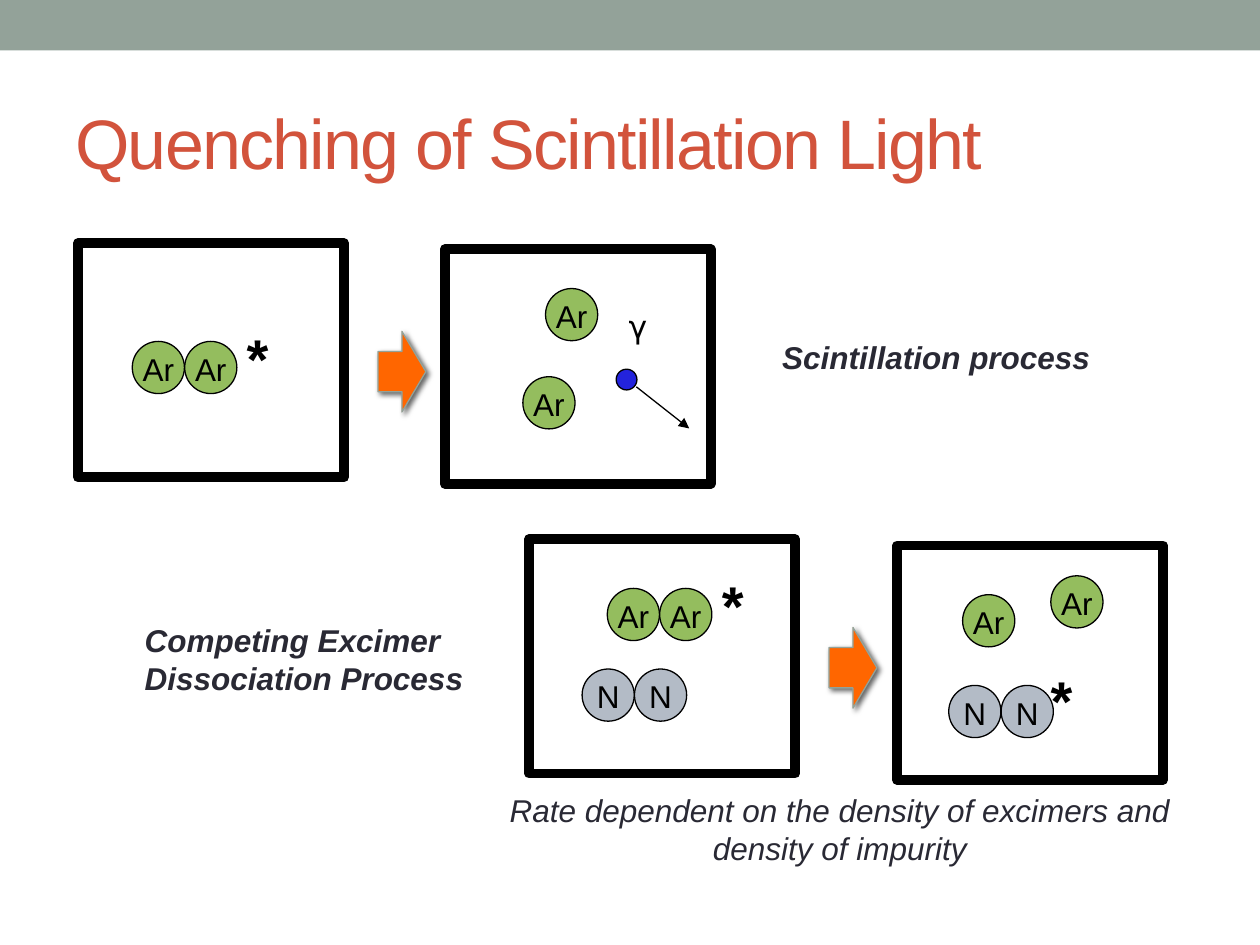
from dataclasses import dataclass

from lxml.etree import SubElement
from pptx import Presentation
from pptx.dml.color import RGBColor
from pptx.enum.shapes import MSO_CONNECTOR as Connector, MSO_SHAPE as Preset
from pptx.enum.text import MSO_ANCHOR as Anchor, PP_ALIGN as Align
from pptx.oxml.ns import qn
from pptx.util import Inches, Pt


@dataclass(frozen=True)
class Theme:
    font: str = "Arial"
    symbol_font: str = "DejaVu Sans"
    band: str = "93A299"
    title: str = "D2533C"
    body: str = "292934"
    ink: str = "000000"
    paper: str = "FFFFFF"
    argon: str = "94BD5E"
    nitrogen: str = "B3BBC6"
    arrow: str = "FF6600"
    photon: str = "2323DC"
    title_size: int = 40
    star_size: int = 32
    body_size: int = 18
    thin: float = 0.75
    thick: float = 5.67


@dataclass(frozen=True)
class Atom:
    symbol: str
    col: float
    row: float


@dataclass(frozen=True)
class Chamber:
    """Contents are placed relative to the chamber's top left corner."""
    col: float
    row: float
    atoms: tuple
    star: tuple | None = None


@dataclass(frozen=True)
class Caption:
    text: str
    col: float
    row: float
    width: float
    height: float
    bold: bool = True
    align: Align = Align.LEFT


THEME = Theme()
COLS, ROWS = 100, 75
ATOM, PITCH = 4.14, 4.16
CHAMBER_SIZE = (21.1, 18.6)
FILLS = {"Ar": THEME.argon, "N": THEME.nitrogen}

deck = Presentation()
deck.slide_width, deck.slide_height = Inches(10), Inches(7.5)
page = deck.slides.add_slide(deck.slide_layouts[6])


def across(cols: float) -> int:
    return round(deck.slide_width * cols / COLS)


def down(rows: float) -> int:
    return round(deck.slide_height * rows / ROWS)


def place(col: float, row: float, width: float, height: float) -> tuple:
    return across(col), down(row), across(width), down(height)


def add_figure(preset: Preset, area: tuple, fill: str,
               line: str | None = THEME.ink, weight: float = THEME.thin):
    figure = page.shapes.add_shape(preset, *place(*area))
    figure.shadow.inherit = False
    figure.fill.solid()
    figure.fill.fore_color.rgb = RGBColor.from_string(fill)
    if line:
        figure.line.color.rgb = RGBColor.from_string(line)
        figure.line.width = Pt(weight)
    else:
        figure.line.fill.background()
    return figure


def write(box, text: str, size: float = THEME.body_size, color: str = THEME.ink,
          font: str = THEME.font, bold: bool = False, italic: bool = False,
          align: Align = Align.LEFT, anchor: Anchor = Anchor.TOP,
          inset_top: float = 0.05, wrap: bool = True):
    frame = box.text_frame
    frame.word_wrap = wrap
    frame.vertical_anchor = anchor
    frame.margin_left = frame.margin_right = Inches(0.1)
    frame.margin_top, frame.margin_bottom = Inches(inset_top), Inches(0.05)
    para = frame.paragraphs[0]
    para.alignment = align
    span = para.add_run()
    span.text = text
    span.font.name, span.font.size = font, Pt(size)
    span.font.bold, span.font.italic = bold, italic
    span.font.color.rgb = RGBColor.from_string(color)
    return span


def add_text(area: tuple, text: str, **style):
    return write(page.shapes.add_textbox(*place(*area)), text, **style)


def pair(symbol: str, col: float, row: float) -> tuple:
    return Atom(symbol, col, row), Atom(symbol, col + PITCH, row)


def draw_chamber(chamber: Chamber) -> None:
    frame = add_figure(Preset.RECTANGLE, (chamber.col, chamber.row, *CHAMBER_SIZE),
                       THEME.paper, weight=THEME.thick)
    SubElement(frame.line._get_or_add_ln(), qn("a:round"))
    for atom in chamber.atoms:
        ball = add_figure(Preset.OVAL, (chamber.col + atom.col, chamber.row + atom.row,
                                        ATOM, ATOM), FILLS[atom.symbol])
        write(ball, atom.symbol, align=Align.CENTER, anchor=Anchor.MIDDLE,
              inset_top=0.07, wrap=False)
    if chamber.star:
        col, row = chamber.star
        add_text((chamber.col + col, chamber.row + row, 6.9, 5.3), "*",
                 size=THEME.star_size, bold=True, inset_top=0.08)


def draw_arrow(col: float, row: float) -> None:
    arrow = add_figure(Preset.RIGHT_ARROW, (col, row, 3.8, 6.4), THEME.arrow, THEME.band)
    effects = arrow._element.spPr.find(qn("a:effectLst"))
    shadow = SubElement(effects, qn("a:outerShdw"), blurRad=str(Pt(3)),
                        dist=str(Pt(2)), dir=str(45 * 60000), rotWithShape="0")
    color = SubElement(shadow, qn("a:srgbClr"), val=THEME.ink)
    SubElement(color, qn("a:alpha"), val="60000")


def draw_reaction(before: Chamber, after: Chamber) -> None:
    draw_chamber(before)
    draw_chamber(after)
    draw_arrow(before.col + 23.8, before.row + 7)


def draw_photon(chamber: Chamber) -> None:
    col, row = chamber.col, chamber.row
    add_figure(Preset.OVAL, (col + 13.6, row + 9.5, 1.65, 1.65), THEME.photon)
    track = page.shapes.add_connector(
        Connector.STRAIGHT, across(col + 15.2), down(row + 10.9),
        across(col + 19.4), down(row + 14.2))
    track.line.color.rgb = RGBColor.from_string(THEME.ink)
    track.line.width = Pt(THEME.thin)
    SubElement(track.line._get_or_add_ln(), qn("a:tailEnd"), type="triangle")
    SubElement(track._element.spPr, qn("a:effectLst"))
    add_text((col + 13.6, row + 4.5, 8.3, 0.6), "γ", font=THEME.symbol_font)


# Band and title
add_figure(Preset.RECTANGLE, (0, 0, COLS, 4), THEME.band, line=None)
title = add_text((5, 5.8, 90, 10.8), "Quenching of Scintillation Light",
                 size=THEME.title_size, color=THEME.title, anchor=Anchor.MIDDLE)
title._r.get_or_add_rPr().set("spc", "-100")

# Scintillation: an excimer decays and emits a photon
decayed = Chamber(35.3, 19.8, (Atom("Ar", 6.2, 10.1), Atom("Ar", 8, 3.1)))
draw_reaction(Chamber(6.2, 19.3, pair("Ar", 4.3, 7.8), star=(12.4, 5.6)), decayed)
draw_photon(decayed)

# Quenching: the excimer hands its energy to nitrogen
draw_reaction(
    Chamber(42, 42.8, pair("N", 4.2, 10.3) + pair("Ar", 6.2, 3.9), star=(14.3, 1.7)),
    Chamber(71.2, 43.3, (Atom("Ar", 5.2, 3.9), Atom("Ar", 12.2, 2.4),
                         *pair("N", 4.1, 11.1)), star=(11.2, 8.7)))

# Captions
for caption in (
    Caption("Scintillation process", 61.1, 26.3, 31.5, 4),
    Caption("Competing Excimer Dissociation Process", 10.5, 48.8, 30.6, 7.1),
    Caption("Rate dependent on the density of excimers and density of impurity",
            38.3, 62.3, 56.7, 7.1, bold=False, align=Align.CENTER),
):
    add_text((caption.col, caption.row, caption.width, caption.height), caption.text,
             color=THEME.body, bold=caption.bold, italic=True, align=caption.align)

deck.save("out.pptx")
